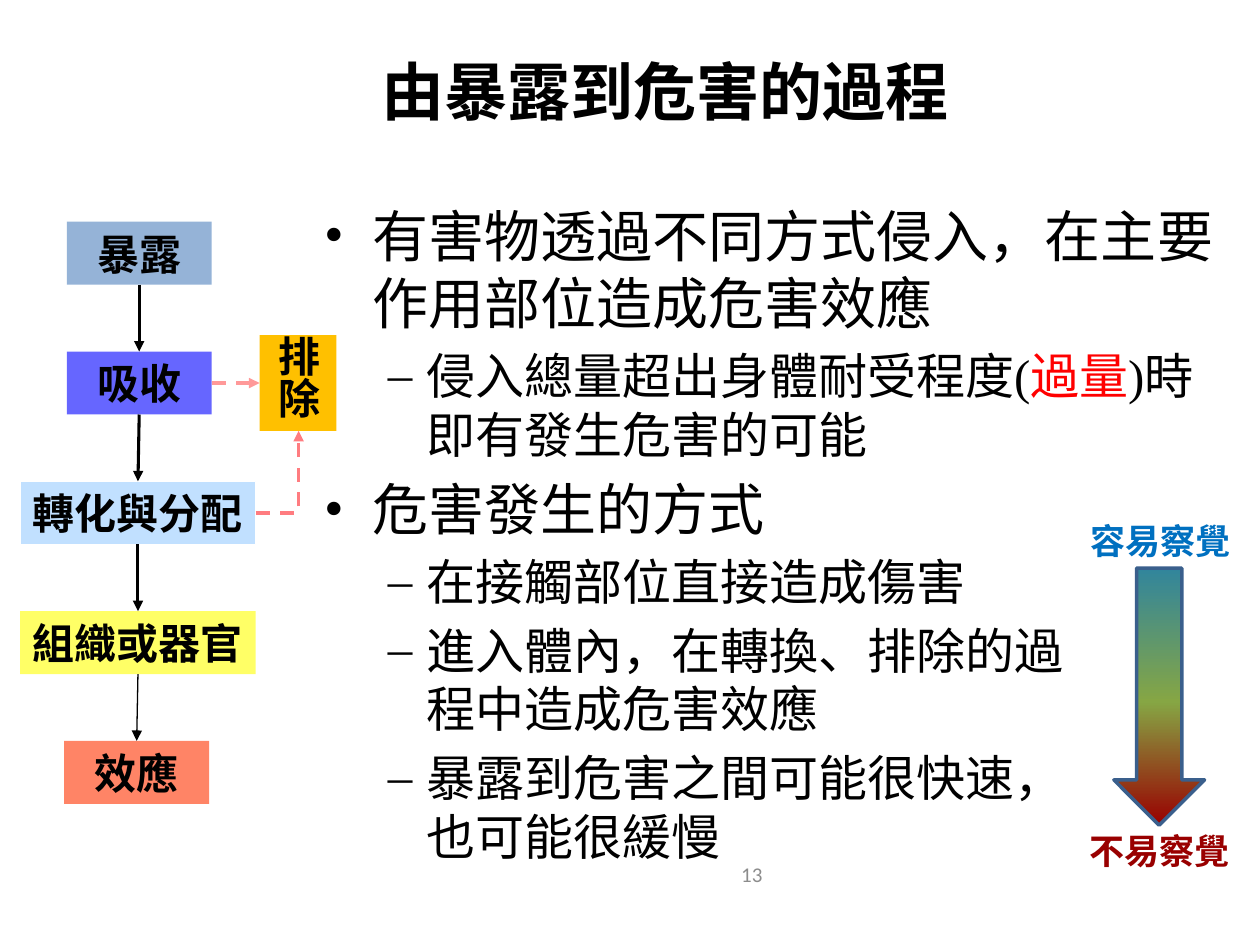
"""Build the slide on how exposure leads to harm."""
from dataclasses import dataclass
from itertools import pairwise

from lxml.etree import SubElement
from pptx import Presentation
from pptx.dml.color import RGBColor
from pptx.enum.dml import MSO_LINE as DASH
from pptx.enum.shapes import MSO_CONNECTOR as CONN, MSO_SHAPE as SHAPE
from pptx.enum.text import MSO_ANCHOR as ANCHOR, PP_ALIGN as ALIGN
from pptx.oxml import parse_xml
from pptx.oxml.ns import nsdecls, qn
from pptx.util import Inches, Pt

CJK = "Noto Sans CJK SC"
BOLD = {"name": CJK, "bold": True}
TIGHT = {"margin_top": 0, "margin_bottom": 0, "vertical_anchor": ANCHOR.MIDDLE, "word_wrap": False}


@dataclass
class Step:
    text: str
    left: float
    width: float
    fill: str
    line: str | None = None


@dataclass
class Label:
    text: str
    box: tuple[float, float, float, float]
    size: int
    color: str
    align: ALIGN
    font: dict


@dataclass
class Level:
    size: int
    bullet: str
    margin: float
    indent: float


LEVELS = [Level(32, "•", 0.38, -0.38), Level(28, "–", 0.81, -0.31)]
BODY = [
    (0, [("有害物透過不同方式侵入，在主要作用部位造成危害效應", "000000")]),
    (1, [("侵入總量超出身體耐受程度(", "000000"), ("過量", "FF0000"),
         (")時即有發生危害的可能", "000000")]),
    (0, [("危害發生的方式", "000000")]),
    (1, [("在接觸部位直接造成傷害", "000000")]),
    (1, [("進入體內，在轉換、排除的過\v程中造成危害效應", "000000")]),
    (1, [("暴露到危害之間可能很快速，\v也可能很緩慢", "000000")]),
]
STEPS = [
    Step("暴露", 0.53, 1.15, "4F81BD"),
    Step("吸收", 0.53, 1.15, "0000FF"),
    Step("轉化與分配", 0.16, 1.87, "99CCFF", "FFFFFF"),
    Step("組織或器官", 0.16, 1.87, "FFFF00"),
    Step("效應", 0.51, 1.15, "FF3300"),
]
STEP_TOP, STEP_PITCH, STEP_HEIGHT = 1.76, 1.03, 0.5
ARROW_WIDTHS = [1.75, 1.75, 1.75, 0.75]
LABELS = [
    Label("由暴露到危害的過程", (1.06, 0.09, 8.44, 1.25), 36, "000000", ALIGN.CENTER, BOLD),
    Label("容易察覺", (8.55, 4.07, 1.32, 0.44), 20, "0070C0", ALIGN.CENTER, BOLD),
    Label("不易察覺", (8.54, 6.53, 1.32, 0.44), 20, "990000", ALIGN.CENTER, BOLD),
    Label("13", (3.82, 6.74, 2.33, 0.4), 12, "8C8C8C", ALIGN.RIGHT, {"name": "Calibri"}),
]
SCALE = [(0, "990000"), (48, "86A644"), (100, "31859C")]


def rgb(color: str) -> RGBColor:
    """Turn a hex string into a colour."""
    return RGBColor.from_string(color)


def assign(target, values: dict) -> None:
    """Set each named attribute on the target."""
    for name, value in values.items():
        setattr(target, name, value)


def add_run(p, text: str, size: int, color: str, font: dict) -> None:
    """Add formatted text, keeping line breaks inside it."""
    for i, line in enumerate(text.split("\v")):
        if i:
            p.add_line_break()
        r = p.add_run()
        r.text = line
        assign(r.font, {"size": Pt(size), **font})
        r.font.color.rgb = rgb(color)
        SubElement(r.font._element, qn("a:ea"), typeface=CJK)


def write(sp, text: str, size: int, color: str, align: ALIGN, font: dict) -> None:
    """Write one centred-in-height line into a shape."""
    tf = sp.text_frame
    assign(tf, TIGHT)
    p = tf.paragraphs[0]
    p.alignment = align
    add_run(p, text, size, color, font)


def add_label(s, label: Label) -> None:
    """Add a single line text box."""
    sp = s.shapes.add_textbox(*map(Inches, label.box))
    write(sp, label.text, label.size, label.color, label.align, label.font)


def add_box(s, kind: SHAPE, box: tuple, fill: str):
    """Add a flat filled shape without outline."""
    sp = s.shapes.add_shape(kind, *map(Inches, box))
    sp.shadow.inherit = False
    sp.fill.solid()
    sp.fill.fore_color.rgb = rgb(fill)
    sp.line.fill.background()
    return sp


def add_step(s, step: Step, top: float):
    """Add one translucent step of the process."""
    sp = add_box(s, SHAPE.RECTANGLE, (step.left, top, step.width, STEP_HEIGHT), step.fill)
    color = sp.fill._xPr.find(qn("a:solidFill"))[0]
    SubElement(color, qn("a:alpha"), val="60000")
    if step.line:
        sp.line.color.rgb = rgb(step.line)
        sp.line.width = Pt(0.75)
    write(sp, step.text, 24, "000000", ALIGN.CENTER, BOLD)
    return sp


def add_arrow(s, kind: CONN, ends: tuple, color: str, width: float, dashed: bool = False):
    """Add a connector with a triangle at its end."""
    c = s.shapes.add_connector(kind, *map(Inches, ends))
    c.line.color.rgb = rgb(color)
    c.line.width = Pt(width)
    if dashed:
        c.line.dash_style = DASH.DASH
    SubElement(c.line._get_or_add_ln(), qn("a:tailEnd"), type="triangle")
    SubElement(c._element.spPr, qn("a:effectLst"))
    return c


def join(s, first, last, sites: tuple[int, int], color: str, width: float, dashed: bool = False) -> None:
    """Join two rectangles with a straight arrow."""
    c = add_arrow(s, CONN.STRAIGHT, (0, 0, 0, 0), color, width, dashed)
    c.begin_connect(first, sites[0])
    c.end_connect(last, sites[1])


def add_body(s) -> None:
    """Add the bulleted text."""
    tf = s.shapes.add_textbox(*map(Inches, (2.48, 1.55, 7.31, 5.7))).text_frame
    tf.word_wrap = True
    for i, (depth, runs) in enumerate(BODY):
        p = tf.add_paragraph() if i else tf.paragraphs[0]
        level = LEVELS[depth]
        pPr = p._p.get_or_add_pPr()
        pPr.set("marL", str(Inches(level.margin)))
        pPr.set("indent", str(Inches(level.indent)))
        SubElement(pPr, qn("a:buFont"), typeface="Times New Roman")
        SubElement(pPr, qn("a:buChar"), char=level.bullet)
        assign(p, {"level": depth, "line_spacing": Pt(level.size * 1.2),
                   "space_before": Pt(level.size * 0.2 if i else 0)})
        for text, color in runs:
            add_run(p, text, level.size, color, {"name": "Times New Roman"})


def add_scale(s) -> None:
    """Add the gradient arrow from easy to hard to notice."""
    sp = add_box(s, SHAPE.DOWN_ARROW, (8.84, 4.51, 0.72, 2.04), SCALE[0][1])
    stops = "".join(f'<a:gs pos="{pos * 1000}"><a:srgbClr val="{color}"/></a:gs>' for pos, color in SCALE)
    grad = parse_xml(f'<a:gradFill {nsdecls("a")}><a:gsLst>{stops}</a:gsLst>'
                     '<a:lin ang="16200000" scaled="0"/></a:gradFill>')
    spPr = sp._element.spPr
    spPr.replace(spPr.find(qn("a:solidFill")), grad)
    sp.line.color.rgb = rgb("3A5F8C")
    sp.line.width = Pt(2)


def add_process(s) -> None:
    """Add the steps, the removal box and their arrows."""
    steps = [add_step(s, step, STEP_TOP + i * STEP_PITCH) for i, step in enumerate(STEPS)]
    for (first, last), width in zip(pairwise(steps), ARROW_WIDTHS):
        join(s, first, last, (2, 0), "000000", width)
    removal = add_box(s, SHAPE.RECTANGLE, (2.06, 2.66, 0.61, 0.76), "FFC000")
    write(removal, "排除", 24, "000000", ALIGN.CENTER, BOLD)
    removal.text_frame._txBody.bodyPr.set("vert", "eaVert")
    join(s, steps[1], removal, (3, 1), "FF9999", 2, True)
    bent = add_arrow(s, CONN.ELBOW, (2.03, 4.07, 2.37, 3.42), "FF7C80", 2, True)
    bent._element.spPr.find(qn("a:prstGeom")).set("prst", "bentConnector2")


def main() -> None:
    """Build and save the slide."""
    prs = Presentation()
    prs.slide_width, prs.slide_height = Inches(10), Inches(7.5)
    s = prs.slides.add_slide(prs.slide_layouts[6])
    add_body(s)
    add_scale(s)
    for label in LABELS:
        add_label(s, label)
    add_process(s)
    prs.save("out.pptx")


if __name__ == "__main__":
    main()
